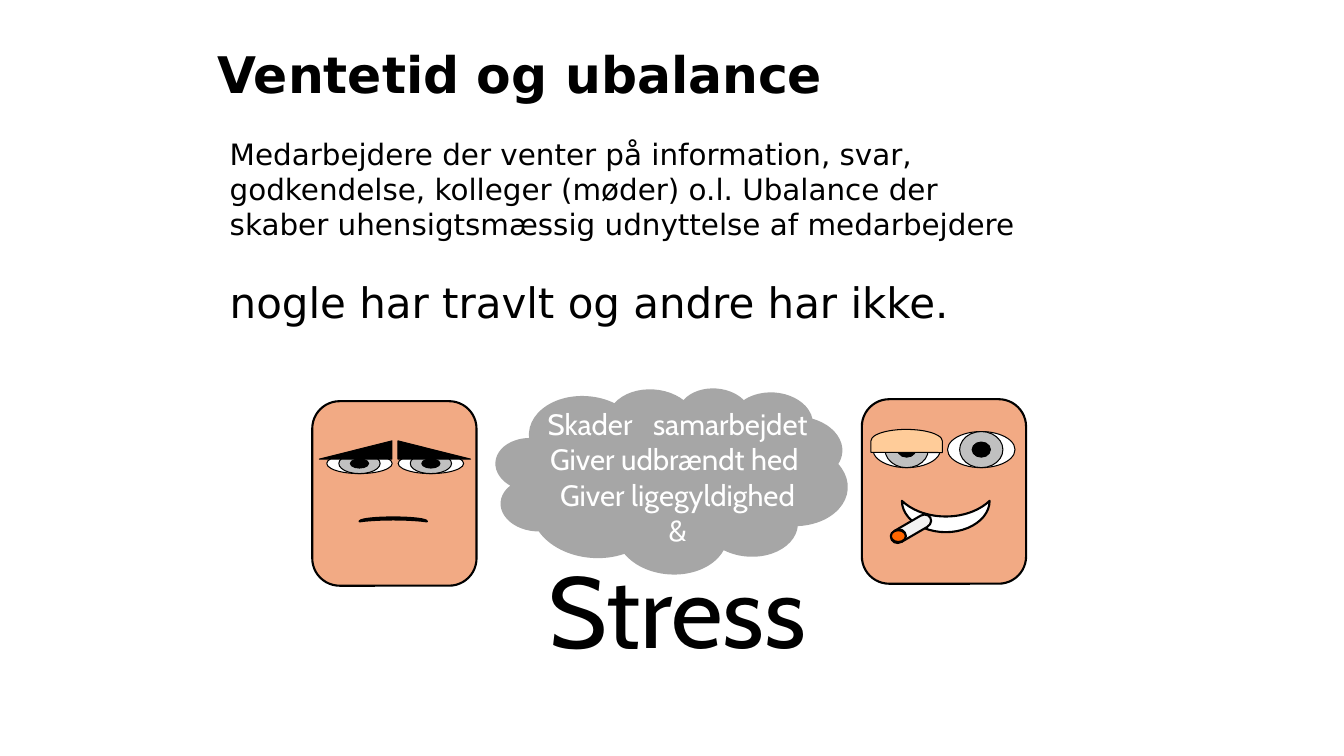
from dataclasses import dataclass

from pptx import Presentation
from pptx.dml.color import RGBColor
from pptx.enum import shapes, text
from pptx.util import Cm, Pt


@dataclass(frozen=True)
class Theme:
    black: str = "000000"
    white: str = "FFFFFF"
    skin: str = "F2AA84"
    iris: str = "C0C0C0"
    eyelid: str = "FFCC99"
    paper: str = "F2F2F2"
    ember: str = "FF6600"
    cloud: str = "A6A6A6"
    heading_font: str = "DejaVu Sans"
    cloud_font: str = "Cabin"
    title_size: int = 36
    body_size: int = 21
    remark_size: int = 30
    stress_size: int = 72
    thin: float = 0.75
    thick: float = 1.5


theme = Theme()
KIND = shapes.MSO_SHAPE


def add_part(group, kind, place, fill, line=theme.black, width=theme.thick,
             rotation=0, flip=None):
    """Add a filled outline; place is left, top, width, height in cm."""
    part = group.shapes.add_shape(kind, *map(Cm, place))
    part.shadow.inherit = False
    part.fill.solid()
    part.fill.fore_color.rgb = RGBColor.from_string(fill)
    part.line.color.rgb = RGBColor.from_string(line)
    part.line.width = Pt(width)
    part.rotation = rotation
    if flip:
        part._element.spPr.xfrm.set(flip, "1")


def style_text(para, font, size, color=theme.black, bold=False):
    for span in para.runs:
        span.font.name = font
        span.font.size = Pt(size)
        span.font.bold = bold
        span.font.color.rgb = RGBColor.from_string(color)


deck = Presentation()
deck.slide_width, deck.slide_height = Cm(33.87), Cm(19.05)
page = deck.slides.add_slide(deck.slide_layouts.get_by_name("Title Only"))

# Title
title = page.shapes.title
title.left, title.top, title.width, title.height = map(Cm, (5.23, 0.1, 21.89, 3.68))
title.text_frame.text = "Ventetid og ubalance"
title.text_frame.vertical_anchor = text.MSO_ANCHOR.MIDDLE
heading = title.text_frame.paragraphs[0]
heading.alignment = text.PP_ALIGN.LEFT
heading.line_spacing = 0.9
style_text(heading, theme.heading_font, theme.title_size, bold=True)

# Explanation
explanation = page.shapes.add_textbox(*map(Cm, (5.54, 3.3, 20.7, 5.13))).text_frame
explanation.word_wrap = True
explanation.text = (
    "Medarbejdere der venter på information, svar, godkendelse, kolleger (møder) o.l. "
    "Ubalance der skaber uhensigtsmæssig udnyttelse af medarbejdere"
)
style_text(explanation.paragraphs[0], theme.heading_font, theme.body_size)
remark = explanation.add_paragraph()
remark.text = "nogle har travlt og andre har ikke."
remark.space_before = Pt(25)
style_text(remark, theme.heading_font, theme.remark_size)

# Heads with concentric eyes: corner, eye centres, sizes of white, iris and pupil
heads = [
    ((7.87, 10.11), (9.06, 10.86), 11.68, ((1.65, 0.51), (1.04, 0.51), (0.46, 0.23))),
    ((21.72, 10.06), (22.85, 24.73), 11.33, ((1.7, 0.91), (1.09, 0.91), (0.46, 0.38))),
]
groups = []
for corner, eye_centres, eye_level, rings in heads:
    head = page.shapes.add_group_shape()
    groups.append(head)
    add_part(head, KIND.ROUNDED_RECTANGLE, (*corner, 4.14, 4.65), theme.skin)
    for centre in eye_centres:
        for (width, height), fill in zip(rings, (theme.white, theme.iris, theme.black)):
            place = (centre - width / 2, eye_level - height / 2, width, height)
            add_part(head, KIND.OVAL, place, fill, width=theme.thin)
busy, idle = groups

# Busy: frown and heavy brows
add_part(busy, KIND.MOON, (9.86, 12.24, 0.1, 1.7), theme.black, rotation=90)
for left, flip in ((8.05, "flipH"), (10.03, None)):
    add_part(busy, KIND.RIGHT_TRIANGLE, (left, 11.11, 1.83, 0.46), theme.black,
             width=theme.thin, flip=flip)

# Idle: grin, drooping eyelid and cigarette
add_part(idle, KIND.MOON, (23.44, 11.91, 0.79, 2.21), theme.white, rotation=270)
add_part(idle, KIND.FLOWCHART_DELAY, (22.56, 10.21, 0.58, 1.8), theme.eyelid,
         width=theme.thin, rotation=270.2)
add_part(idle, KIND.FLOWCHART_DIRECT_ACCESS_STORAGE, (22.4, 13.16, 1.12, 0.33),
         theme.paper, rotation=149.8, flip="flipV")
add_part(idle, KIND.FLOWCHART_CONNECTOR, (22.45, 13.36, 0.38, 0.3), theme.ember)

# Cloud of consequences
consequences = page.shapes.add_group_shape()
add_part(consequences, KIND.CLOUD, (12.5, 9.73, 8.84, 4.7), theme.cloud,
         line=theme.cloud, rotation=3.9)
effects = consequences.shapes.add_textbox(*map(Cm, (12.12, 10.11, 9.91, 6.93))).text_frame
effects.word_wrap = True
effects.text = "\n".join(
    ("Skader", "Giver udbrændt hed ", "Giver ligegyldighed", "&", "Stress"))
first, *_, stress = effects.paragraphs
gap = first.add_run()
gap.text = " "
gap._r.get_or_add_rPr().set("spc", "1000")
first.add_run().text = "samarbejdet"
for para in effects.paragraphs:
    para.alignment = text.PP_ALIGN.CENTER
    style_text(para, theme.cloud_font, theme.body_size, theme.white)
style_text(stress, theme.cloud_font, theme.stress_size)

deck.save("out.pptx")
